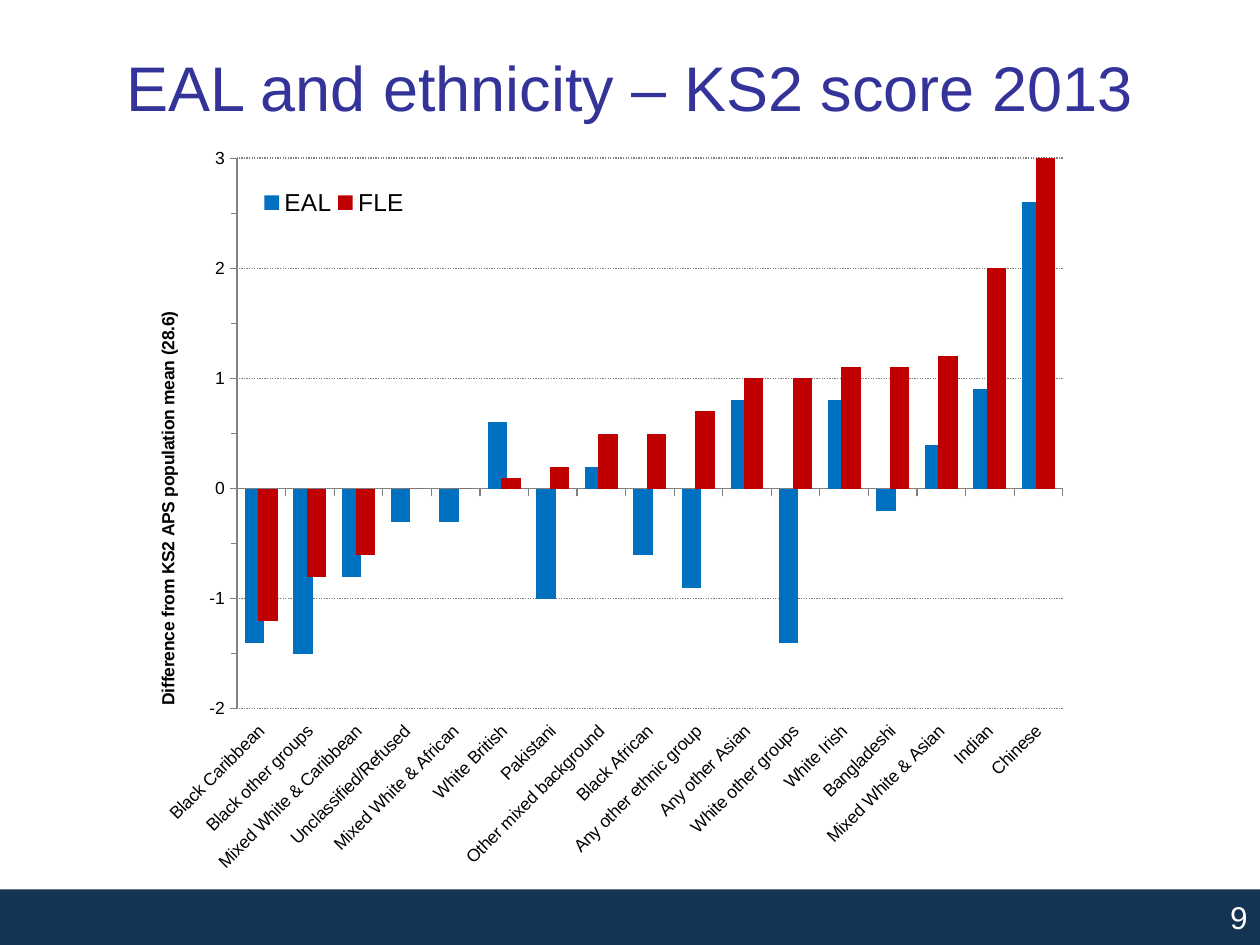
from lxml import etree
from pptx import Presentation
from pptx.chart.data import CategoryChartData
from pptx.dml.color import RGBColor
from pptx.enum.chart import (XL_CHART_TYPE, XL_LEGEND_POSITION,
                             XL_TICK_LABEL_POSITION, XL_TICK_MARK)
from pptx.enum.dml import MSO_LINE
from pptx.enum.shapes import MSO_SHAPE
from pptx.enum.text import MSO_ANCHOR, PP_ALIGN
from pptx.oxml.ns import qn
from pptx.util import Inches, Pt

NAVY = RGBColor(0x13, 0x34, 0x52)
INDIGO = RGBColor(0x33, 0x33, 0x99)
BLUE = RGBColor(0x00, 0x70, 0xC0)
RED = RGBColor(0xC0, 0x00, 0x00)
GREY = RGBColor(0x80, 0x80, 0x80)
BLACK = RGBColor(0, 0, 0)
WHITE = RGBColor(0xFF, 0xFF, 0xFF)
FONT = "Arial"
OUTSIDE = XL_TICK_MARK.OUTSIDE

# Ethnic group, EAL score, FLE score
SCORES = [
    ("Black Caribbean", -1.4, -1.2),
    ("Black other groups", -1.5, -0.8),
    ("Mixed White & Caribbean", -0.8, -0.6),
    ("Unclassified/Refused", -0.3, 0),
    ("Mixed White & African", -0.3, 0),
    ("White British", 0.6, 0.1),
    ("Pakistani", -1, 0.2),
    ("Other mixed background", 0.2, 0.5),
    ("Black African", -0.6, 0.5),
    ("Any other ethnic group", -0.9, 0.7),
    ("Any other Asian", 0.8, 1),
    ("White other groups", -1.4, 1),
    ("White Irish", 0.8, 1.1),
    ("Bangladeshi", -0.2, 1.1),
    ("Mixed White & Asian", 0.4, 1.2),
    ("Indian", 0.9, 2),
    ("Chinese", 2.6, 3.4),
]


def set_font(font, size, color, bold=False):
    font.name, font.size, font.bold = FONT, Pt(size), bold
    font.color.rgb = color


def set_layout(parent, index, inner=False, **shares):
    """Place a chart part by shares (x, y, w, h) of the chart's size."""
    layout = parent.find(qn("c:layout"))
    if layout is None:
        layout = etree.Element(qn("c:layout"))
        parent.insert(index, layout)
    manual = etree.SubElement(layout, qn("c:manualLayout"))
    settings = [("layoutTarget", "inner")] if inner else []
    settings += [("xMode", "edge"), ("yMode", "edge")]
    for tag, value in settings + list(shares.items()):
        etree.SubElement(manual, qn("c:" + tag)).set("val", str(value))


def add_title(slide, box, text):
    tf = slide.shapes.add_textbox(*box).text_frame
    tf.word_wrap = True
    tf.vertical_anchor = MSO_ANCHOR.MIDDLE
    p = tf.paragraphs[0]
    p.text, p.alignment = text, PP_ALIGN.CENTER
    set_font(p.font, 36, INDIGO)


def add_footer(slide, box, number):
    sp = slide.shapes.add_shape(MSO_SHAPE.RECTANGLE, *box)
    sp.shadow.inherit = False
    sp.fill.solid()
    sp.fill.fore_color.rgb = NAVY
    sp.line.fill.background()
    tf = sp.text_frame
    tf.vertical_anchor = MSO_ANCHOR.MIDDLE
    p = tf.paragraphs[0]
    p.text, p.alignment = number, PP_ALIGN.RIGHT
    set_font(p.font, 18, WHITE)


def add_score_chart(slide, box):
    groups, eal, fle = zip(*SCORES)
    data = CategoryChartData()
    data.categories = groups
    data.add_series("EAL", eal)
    data.add_series("FLE", fle)
    chart = slide.shapes.add_chart(
        XL_CHART_TYPE.COLUMN_CLUSTERED, *box, data).chart
    chart.has_title = False
    set_font(chart.font, 10, BLACK)
    set_layout(chart._chartSpace.chart.plotArea, 0, inner=True,
               x=0.098, y=0.031, w=0.867, h=0.731)

    # Columns
    plot = chart.plots[0]
    plot.vary_by_categories = False
    plot.gap_width, plot.overlap = 80, 30
    for series, color in zip(plot.series, (BLUE, RED)):
        series.invert_if_negative = False
        series.format.fill.solid()
        series.format.fill.fore_color.rgb = color

    # Axes
    cat, val = chart.category_axis, chart.value_axis
    for axis in (cat, val):
        axis.major_tick_mark = OUTSIDE
        axis.format.line.color.rgb = GREY
        axis.format.line.width = Pt(0.75)
        set_font(axis.tick_labels.font, 10, BLACK)
    cat.tick_label_position = XL_TICK_LABEL_POSITION.LOW
    body = cat._element.find(qn("c:txPr")).find(qn("a:bodyPr"))
    body.set("rot", str(-45 * 60000))
    body.set("vert", "horz")

    val.minimum_scale, val.maximum_scale = -2, 3
    val.major_unit, val.minor_unit = 1, 0.5
    val.minor_tick_mark = OUTSIDE
    val.tick_labels.number_format = "#,##0"
    val.tick_labels.number_format_is_linked = False
    grid = val.major_gridlines.format.line
    grid.color.rgb = GREY
    grid.width = Pt(0.75)
    grid.dash_style = MSO_LINE.ROUND_DOT

    # Value axis title
    title = val.axis_title
    tf = title.text_frame
    p = tf.paragraphs[0]
    p.text = "Difference from KS2 APS population mean (28.6)"
    set_font(p.font, 10, BLACK, bold=True)
    body = tf._txBody.find(qn("a:bodyPr"))
    body.set("rot", str(-90 * 60000))
    body.set("vert", "horz")
    set_layout(title._element, 1, x=0.01, y=0.23)

    # Legend inside the plot
    chart.has_legend = True
    legend = chart.legend
    legend.position = XL_LEGEND_POSITION.RIGHT
    legend.include_in_layout = False
    set_font(legend.font, 14, BLACK)
    set_layout(legend._element, 1, x=0.12, y=0.06, w=0.16, h=0.06)


def main():
    prs = Presentation()
    prs.slide_width, prs.slide_height = Inches(10), Inches(7.5)
    slide = prs.slides.add_slide(prs.slide_layouts[6])

    def box(*inches):
        return [Inches(n) for n in inches]

    add_footer(slide, box(0, 7.06, 10, 0.44), "9")
    add_title(slide, box(0.5, 0.3, 9, 0.77),
              "EAL and ethnicity – KS2 score 2013")
    add_score_chart(slide, box(1.14, 1.07, 7.56, 5.98))
    prs.save("out.pptx")


if __name__ == "__main__":
    main()
